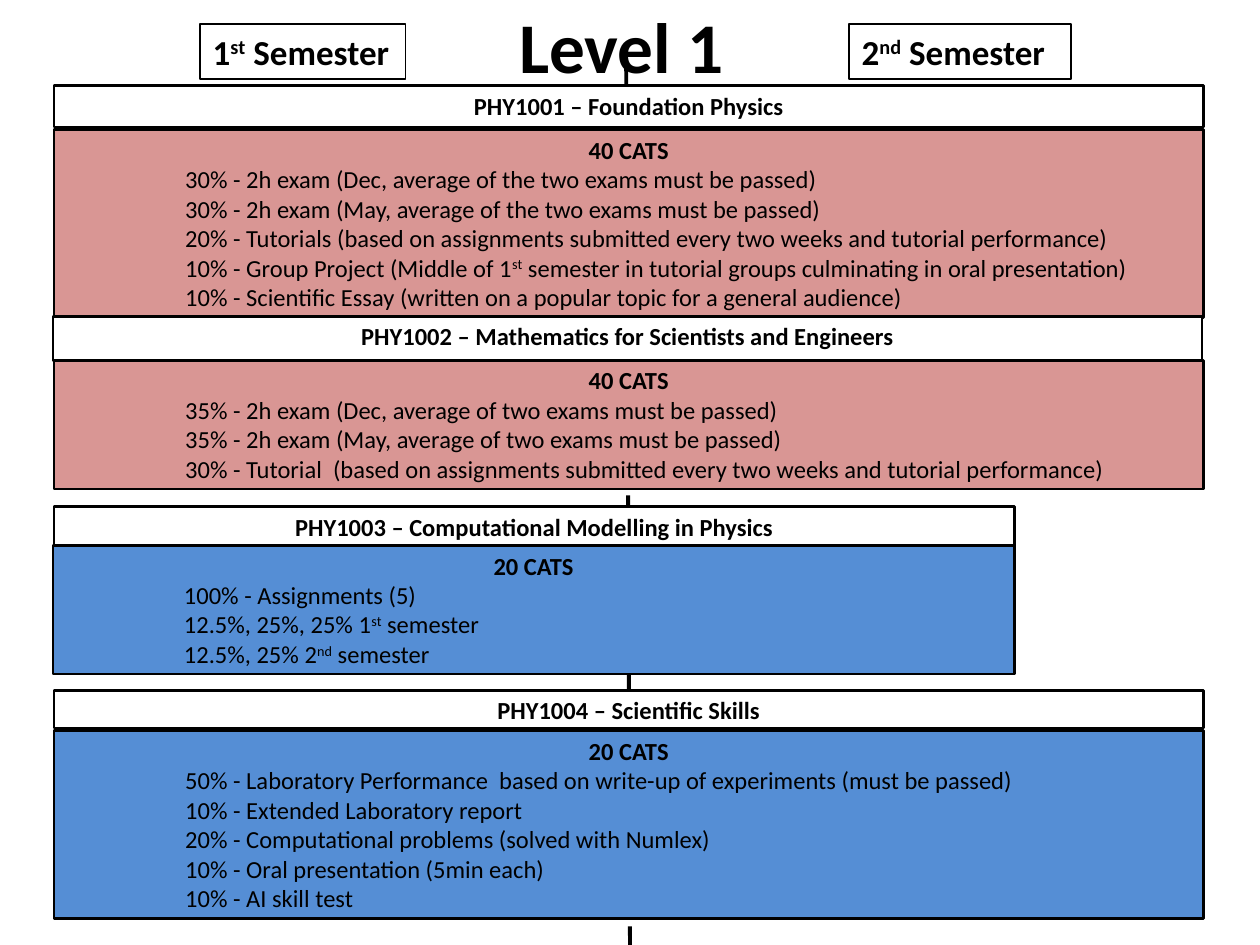
from dataclasses import dataclass

from lxml.etree import SubElement
from pptx import Presentation
from pptx.dml.color import RGBColor
from pptx.enum.dml import MSO_LINE
from pptx.enum.shapes import MSO_CONNECTOR, MSO_SHAPE
from pptx.enum.text import MSO_ANCHOR, MSO_AUTO_SIZE, PP_ALIGN
from pptx.oxml.ns import qn
from pptx.util import Emu, Pt

PX = 9144  # EMU per px, 100 px to the inch


def px(length: int) -> Emu:
    return Emu(length * PX)


@dataclass(frozen=True)
class Theme:
    font: str = "Calibri"
    ink: RGBColor = RGBColor(0, 0, 0)
    paper: RGBColor = RGBColor(255, 255, 255)
    pink: RGBColor = RGBColor(0xD9, 0x96, 0x94)
    blue: RGBColor = RGBColor(0x55, 0x8E, 0xD5)
    title_size: float = 40.7
    semester_size: float = 20
    body_size: float = 14
    box_line: float = 1.5
    semester_line: float = 1
    axis_line: float = 2.25
    inset: int = 4
    indent: int = 100


THEME = Theme()


@dataclass(frozen=True)
class Rect:
    left: int
    top: int
    width: int
    height: int

    def emu(self) -> tuple[Emu, ...]:
        return tuple(px(n) for n in (self.left, self.top, self.width, self.height))


@dataclass(frozen=True)
class Semester:
    label: str
    rect: Rect


@dataclass(frozen=True)
class Module:
    name: str
    credits: str
    fill: RGBColor
    header: Rect
    body: Rect
    lines: tuple[str, ...]


# Carets enclose superscript text; \v is a line break
SEMESTERS = (
    Semester("1^st^ Semester", Rect(159, 19, 163, 44)),
    Semester("2^nd^ Semester", Rect(674, 19, 176, 44)),
)
MODULES = (
    Module(
        "PHY1001 – Foundation Physics", "40 CATS", THEME.pink,
        Rect(43, 68, 912, 33), Rect(43, 103, 912, 149),
        (
            "30% - 2h exam (Dec, average of the two exams must be passed)",
            "30% - 2h exam (May, average of the two exams must be passed)",
            "20% - Tutorials (based on assignments submitted every two weeks and tutorial performance)",
            "10% - Group Project (Middle of 1^st^ semester in tutorial groups culminating in oral presentation)",
            "10% - Scientific Essay (written on a popular topic for a general audience)",
        ),
    ),
    Module(
        "PHY1003 – Computational Modelling in Physics", "20 CATS", THEME.blue,
        Rect(43, 402, 762, 32), Rect(42, 433, 763, 102),
        (
            "100% - Assignments (5)\v12.5%, 25%, 25% 1^st^ semester",
            "12.5%, 25% 2^nd^ semester",
        ),
    ),
    Module(
        "PHY1002 – Mathematics for Scientists and Engineers", "40 CATS", THEME.pink,
        Rect(42, 251, 912, 35), Rect(43, 286, 912, 102),
        (
            "35% - 2h exam (Dec, average of two exams must be passed)",
            "35% - 2h exam (May, average of two exams must be passed)",
            "30% - Tutorial  (based on assignments submitted every two weeks and tutorial performance)",
        ),
    ),
    Module(
        "PHY1004 – Scientific Skills", "20 CATS", THEME.blue,
        Rect(43, 548, 912, 30), Rect(43, 580, 912, 149),
        (
            "50% - Laboratory Performance  based on write-up of experiments (must be passed)",
            "10% - Extended Laboratory report",
            "20% - Computational problems (solved with Numlex)",
            "10% - Oral presentation (5min each)",
            "10% - AI skill test",
        ),
    ),
)


def write(para, text: str, size: float, bold: bool = True) -> None:
    """Fill a paragraph, raising the parts between carets."""
    for index, part in enumerate(text.split("^")):
        first, *rest = part.split("\v")
        spans = [para.add_run()]
        spans[0].text = first
        for piece in rest:
            para.add_line_break()
            spans.append(para.add_run())
            spans[-1].text = piece
        for span in spans:
            font = span.font
            font.name, font.size, font.bold = THEME.font, Pt(size), bold
            font.color.rgb = THEME.ink
            if index % 2:
                span._r.get_or_add_rPr().set("baseline", "30000")


def add_box(shapes, rect: Rect, fill: RGBColor, line: float):
    box = shapes.add_shape(MSO_SHAPE.RECTANGLE, *rect.emu())
    box.shadow.inherit = False
    box.fill.solid()
    box.fill.fore_color.rgb = fill
    box.line.color.rgb = THEME.ink
    box.line.width = Pt(line)
    frame = box.text_frame
    frame.vertical_anchor = MSO_ANCHOR.TOP
    frame.auto_size = MSO_AUTO_SIZE.SHAPE_TO_FIT_TEXT
    frame.paragraphs[0].alignment = PP_ALIGN.LEFT
    return box


def add_module_box(shapes, rect: Rect, fill: RGBColor, heading: str,
                   lines: tuple[str, ...] = ()) -> None:
    frame = add_box(shapes, rect, fill, THEME.box_line).text_frame
    frame.word_wrap = True
    frame.margin_left = frame.margin_right = px(THEME.inset)
    frame.margin_top = frame.margin_bottom = px(THEME.inset)
    frame.paragraphs[0].alignment = PP_ALIGN.CENTER
    write(frame.paragraphs[0], heading, THEME.body_size)
    for line in lines:
        para = frame.add_paragraph()
        para.level = 2
        para.alignment = PP_ALIGN.LEFT
        para._p.get_or_add_pPr().set("marL", str(px(THEME.indent)))
        write(para, line, THEME.body_size, bold=False)


def add_module(page, module: Module) -> None:
    shapes = page.shapes.add_group_shape().shapes
    add_module_box(shapes, module.header, THEME.paper, module.name)
    add_module_box(shapes, module.body, module.fill, module.credits, module.lines)


def add_semester(page, semester: Semester) -> None:
    box = add_box(page.shapes, semester.rect, THEME.paper, THEME.semester_line)
    box.text_frame.word_wrap = False
    write(box.text_frame.paragraphs[0], semester.label, THEME.semester_size)


def add_divider(page) -> None:
    divider = page.shapes.add_connector(
        MSO_CONNECTOR.STRAIGHT, px(497), px(51), px(500), px(750))
    divider.line.color.rgb = THEME.ink
    divider.line.width = Pt(THEME.axis_line)
    divider.line.dash_style = MSO_LINE.LONG_DASH
    SubElement(divider._element.spPr, qn("a:effectLst"))


def set_title(page, text: str) -> None:
    title = page.shapes.title
    title.left, title.top, title.width, title.height = Rect(43, 2, 900, 68).emu()
    frame = title.text_frame
    frame.auto_size = MSO_AUTO_SIZE.NONE
    frame.vertical_anchor = MSO_ANCHOR.MIDDLE
    frame.paragraphs[0].alignment = PP_ALIGN.CENTER
    write(frame.paragraphs[0], text, THEME.title_size)


def main() -> None:
    deck = Presentation()
    deck.slide_width, deck.slide_height = px(1000), px(750)
    page = deck.slides.add_slide(deck.slide_layouts[5])

    # Heading and the line between the semesters
    set_title(page, "Level 1")
    add_divider(page)
    for semester in SEMESTERS:
        add_semester(page, semester)

    # Course modules
    for module in MODULES:
        add_module(page, module)

    deck.save("out.pptx")


if __name__ == "__main__":
    main()
